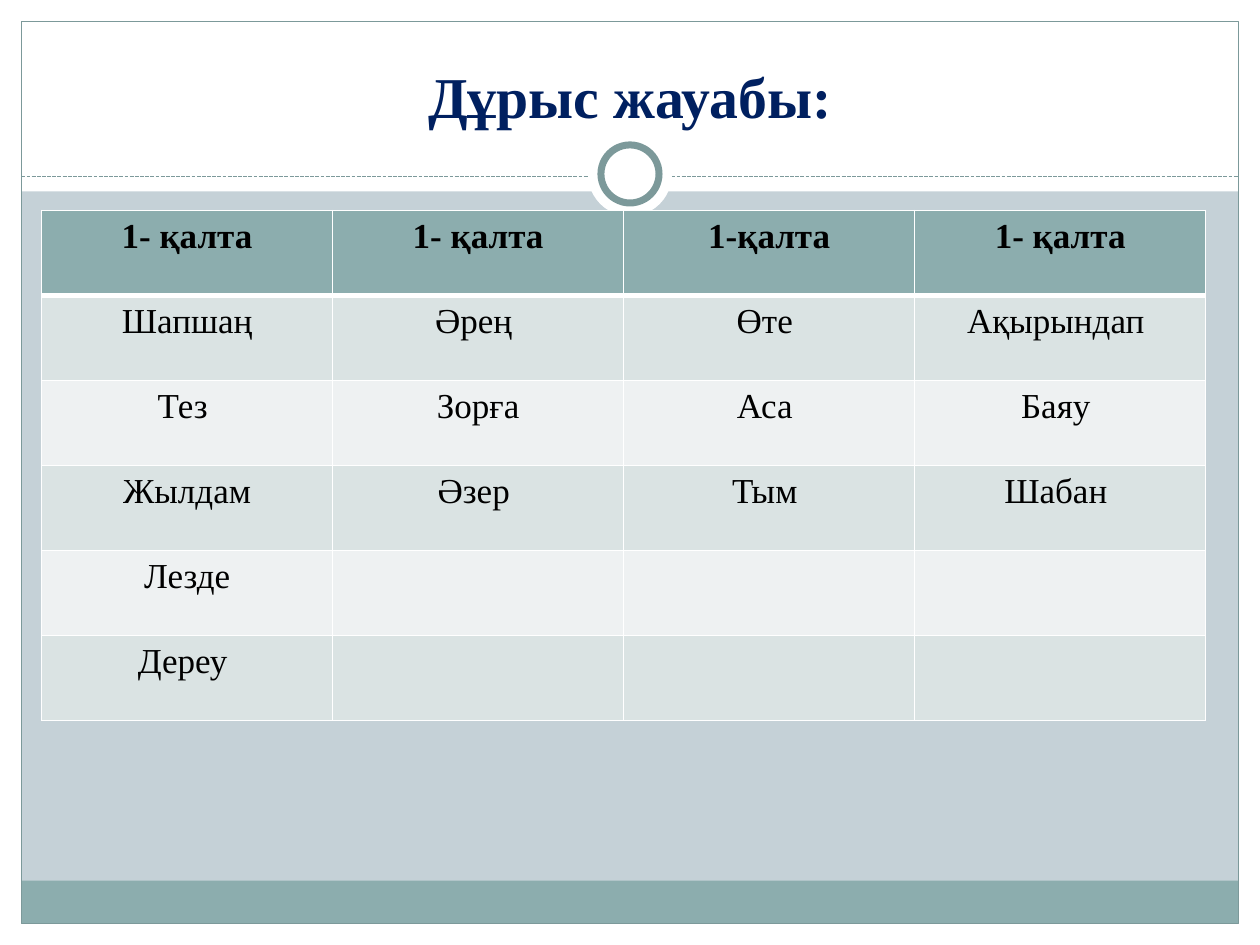
"""Build the answer slide: a title over a four-column table of adverbs."""
from lxml import etree
from pptx import Presentation
from pptx import util as u
from pptx.dml.color import RGBColor
from pptx.enum import dml, shapes, text
from pptx.oxml import ns

Pt = u.Pt
WHITE = RGBColor(0xFF, 0xFF, 0xFF)
BLACK = RGBColor(0, 0, 0)
NAVY = RGBColor(0x00, 0x20, 0x60)
BACKDROP = RGBColor(0xC5, 0xD1, 0xD7)
TEAL = RGBColor(0x8C, 0xAD, 0xAE)
DARK_TEAL = RGBColor(0x7C, 0x99, 0x9A)
BANDS = [RGBColor(0xDA, 0xE3, 0xE3), RGBColor(0xEE, 0xF1, 0xF2)]
FONT = "Times New Roman"

TITLE = "Дұрыс жауабы:"
HEADERS = ["1- қалта", "1- қалта", "1-қалта", "1- қалта"]
POCKETS = [
    ["Шапшаң", "Тез ", "Жылдам", "Лезде", "Дереу "],
    ["Әрең ", "Зорға", "Әзер "],
    ["Өте ", "Аса ", "Тым "],
    ["Ақырындап ", "Баяу ", "Шабан "],
]

WIDTH, HEIGHT, MARGIN = 720, 540, 12.24
INNER = WIDTH - 2 * MARGIN
RULE_Y = 100.8
RECT, OVAL = shapes.MSO_SHAPE.RECTANGLE, shapes.MSO_SHAPE.OVAL
FRAME_PARTS = [
    (RECT, (0, HEIGHT - MARGIN, WIDTH, MARGIN), WHITE, None),
    (RECT, (0, 0, WIDTH, 109.44), WHITE, None),
    (RECT, (0, 0, MARGIN, HEIGHT), WHITE, None),
    (RECT, (WIDTH - MARGIN, 0, MARGIN, HEIGHT), WHITE, None),
    (RECT, (MARGIN, 503.28, INNER, 24.48), TEAL, None),
    (RECT, (MARGIN, MARGIN, INNER, HEIGHT - 2 * MARGIN), None, 0.75),
]
RING_PARTS = [
    (OVAL, (336, 75.6, 48, 48), WHITE, None),
    (OVAL, (343.4, 82.8, 33.2, 33.2), WHITE, 4),
]
TABLE_LEFT, TABLE_TOP, COLUMN_WIDTH, ROW_HEIGHT = 23.76, 120.24, 166.32, 48.6


def add_parts(slide, parts):
    for preset, box, fill, line_width in parts:
        part = slide.shapes.add_shape(preset, *map(Pt, box))
        part.shadow.inherit = False
        if fill is None:
            part.fill.background()
        else:
            part.fill.solid()
            part.fill.fore_color.rgb = fill
        if line_width is None:
            part.line.fill.background()
        else:
            part.line.color.rgb = DARK_TEAL
            part.line.width = Pt(line_width)


def add_rule(slide):
    rule = slide.shapes.add_connector(
        shapes.MSO_CONNECTOR.STRAIGHT,
        Pt(MARGIN), Pt(RULE_Y), Pt(WIDTH - MARGIN), Pt(RULE_Y))
    rule.line.color.rgb = DARK_TEAL
    rule.line.width = Pt(0.75)
    rule.line.dash_style = dml.MSO_LINE.SQUARE_DOT
    etree.SubElement(rule._element.spPr, ns.qn("a:effectLst"))


def write(paragraph, words, size, color, bold):
    paragraph.alignment = text.PP_ALIGN.CENTER
    run = paragraph.add_run()
    run.text = words
    run.font.name = FONT
    run.font.size = Pt(size)
    run.font.bold = bold
    run.font.color.rgb = color


def set_borders(cell, widths):
    properties = cell._tc.get_or_add_tcPr()
    for position, (side, width) in enumerate(widths.items()):
        border = etree.Element(ns.qn(f"a:ln{side}"), w=str(Pt(width)))
        fill = etree.SubElement(border, ns.qn("a:solidFill"))
        etree.SubElement(fill, ns.qn("a:srgbClr"), val=str(WHITE))
        properties.insert(position, border)


def add_title(slide):
    title = slide.shapes.title
    title.left, title.top, title.width, title.height = map(Pt, (24, 18, 672, 60))
    title.text_frame.vertical_anchor = text.MSO_ANCHOR.BOTTOM
    write(title.text_frame.paragraphs[0], TITLE, 33, NAVY, True)
    slide.shapes._spTree.append(title._element)


def add_answers(slide):
    rows, columns = 1 + max(map(len, POCKETS)), len(HEADERS)
    table = slide.shapes.add_table(
        rows, columns, Pt(TABLE_LEFT), Pt(TABLE_TOP),
        Pt(columns * COLUMN_WIDTH), Pt(rows * ROW_HEIGHT)).table
    for column, (header, pocket) in enumerate(zip(HEADERS, POCKETS)):
        entries = [header] + pocket
        for row in range(rows):
            cell = table.cell(row, column)
            cell.fill.solid()
            cell.fill.fore_color.rgb = BANDS[(row - 1) % 2] if row else TEAL
            set_borders(cell, {"L": 1, "R": 1, "T": 3 if row == 1 else 1,
                               "B": 1 if row else 3})
            if row < len(entries):
                write(cell.text_frame.paragraphs[0], entries[row], 20, BLACK, row == 0)


def main():
    deck = Presentation()
    deck.slide_width, deck.slide_height = Pt(WIDTH), Pt(HEIGHT)
    slide = deck.slides.add_slide(deck.slide_layouts[5])
    slide.background.fill.solid()
    slide.background.fill.fore_color.rgb = BACKDROP
    add_parts(slide, FRAME_PARTS)
    add_rule(slide)
    add_parts(slide, RING_PARTS)
    add_title(slide)
    add_answers(slide)
    deck.save("out.pptx")


if __name__ == "__main__":
    main()
